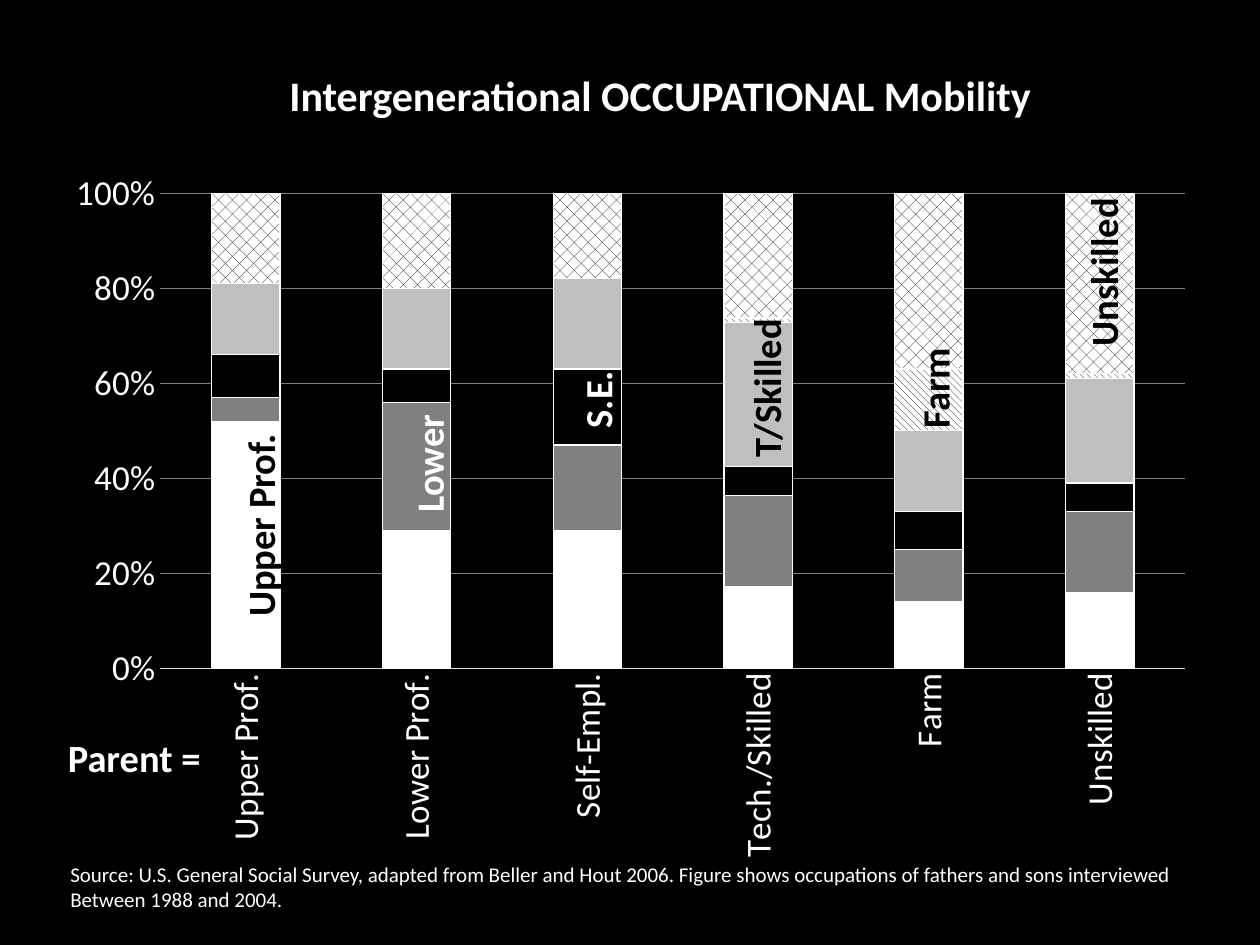
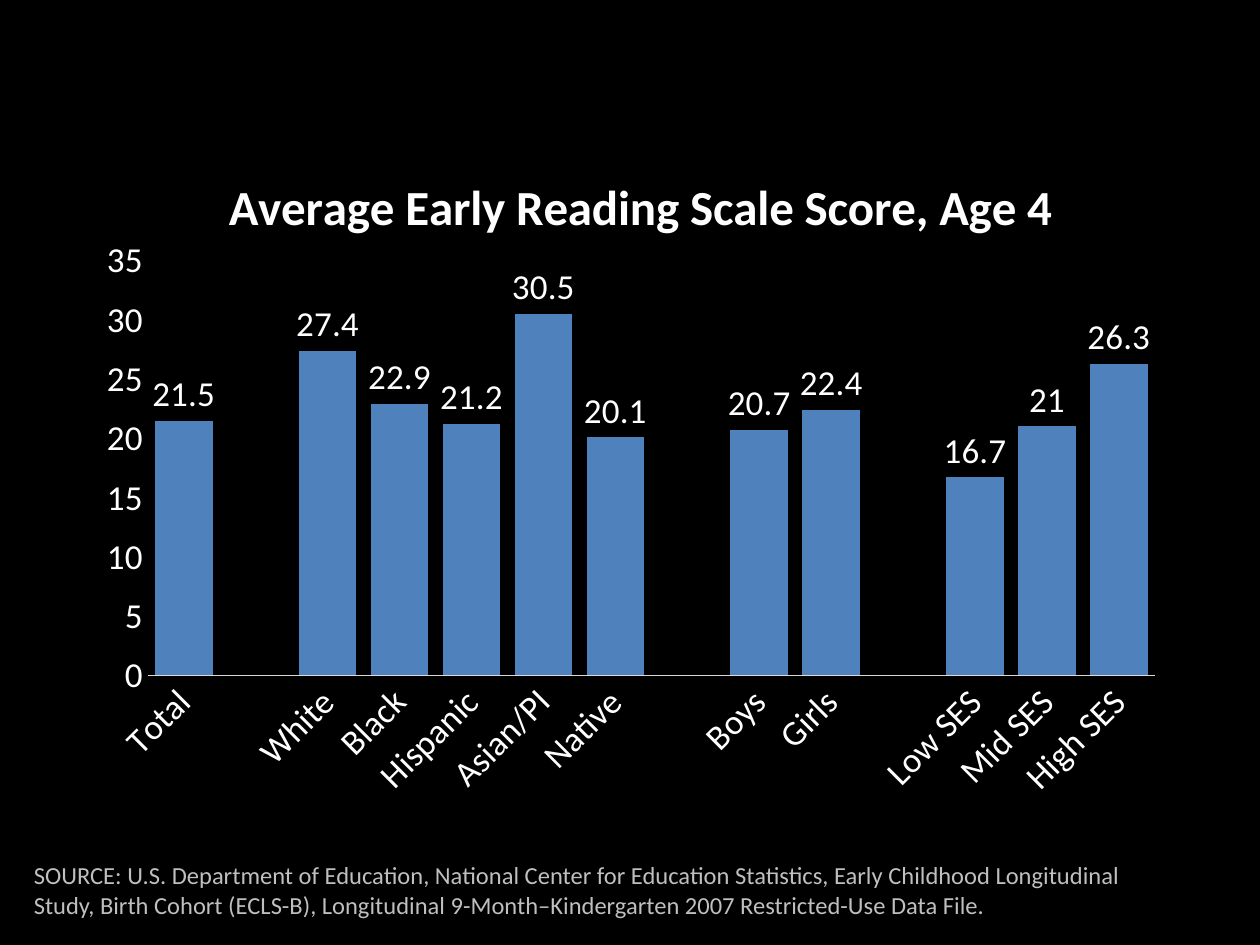
from lxml.etree import SubElement
from pptx import Presentation
from pptx.chart.data import CategoryChartData as ChartData
from pptx.dml.color import RGBColor
from pptx.enum.chart import XL_CHART_TYPE as ChartType
from pptx.enum.chart import XL_LABEL_POSITION as LabelPosition
from pptx.enum.chart import XL_TICK_MARK as TickMark
from pptx.enum.dml import MSO_PATTERN as Pattern
from pptx.enum.text import MSO_ANCHOR as Anchor
from pptx.enum.text import PP_ALIGN as Align
from pptx.oxml.ns import qn
from pptx.util import Inches, Pt

COLORS = {"black": "000000", "white": "FFFFFF", "axis": "D9D9D9",
          "grid": "808080", "silver": "BFBFBF", "blue": "4F81BD"}
FONT = "Calibri"
COLUMNS, ROWS = 100, 75
TITLE_ONLY, BLANK = 5, 6


def color(name):
    return RGBColor.from_string(COLORS[name])


def set_line(line, name):
    line.color.rgb = color(name)
    line.width = Pt(0.75)


def set_font(font, size, name="white", bold=False):
    font.name, font.size, font.bold = FONT, Pt(size), bold
    font.color.rgb = color(name)


def set_fill(fill, style):
    """Fill with a colour name, or with a black pattern on white."""
    if isinstance(style, str):
        fill.solid()
        fill.fore_color.rgb = color(style)
    else:
        fill.patterned()
        fill.pattern = style
        fill.fore_color.rgb = color("black")
        fill.back_color.rgb = color("white")


def set_layout(element, index, **shares):
    """Fix a chart part at shares (x, y, w, h) of the chart's size."""
    for old in element.findall(qn("c:layout")):
        element.remove(old)
    layout = SubElement(element, qn("c:layout"))
    element.insert(index, layout)
    manual = SubElement(layout, qn("c:manualLayout"))
    settings = {"xMode": "edge", "yMode": "edge", **shares}
    if "w" in shares:
        settings = {"layoutTarget": "inner", **settings}
    for tag, value in settings.items():
        SubElement(manual, qn(f"c:{tag}")).set("val", str(value))


class Pages:
    """The shared style and the current page, on a 100 by 75 grid."""

    def __init__(self):
        self.deck = Presentation()
        self.deck.slide_width, self.deck.slide_height = Inches(10), Inches(7.5)
        set_fill(self.deck.slide_master.background.fill, "black")

    def new_page(self, layout):
        self.page = self.deck.slides.add_slide(self.deck.slide_layouts[layout])

    def area(self, left, top, width, height):
        column = self.deck.slide_width / COLUMNS
        row = self.deck.slide_height / ROWS
        return [round(n) for n in (left * column, top * row,
                                   width * column, height * row)]

    def title(self, text, *place):
        box = self.page.shapes.title
        box.left, box.top, box.width, box.height = self.area(*place)
        box.text_frame.text = text
        box.text_frame.word_wrap = False
        box.text_frame.vertical_anchor = Anchor.TOP
        para = box.text_frame.paragraphs[0]
        para.alignment = Align.CENTER
        set_font(para.font, 24, bold=True)

    def text(self, text, *place, size, name="white", bold=False,
             wrap=False, align=Align.LEFT):
        box = self.page.shapes.add_textbox(*self.area(*place))
        box.text_frame.word_wrap = wrap
        box.text_frame.text = text
        for para in box.text_frame.paragraphs:
            para.alignment = align
            set_font(para.font, size, name, bold)
        return box

    def upright_label(self, text, center, middle, length, name):
        height = 4.7
        box = self.text(text, center - length / 2, middle - height / 2,
                        length, height, size=22, name=name, bold=True,
                        align=Align.CENTER)
        box.rotation = 270

    def column_chart(self, kind, place, categories, rows, plot, gap, tilt,
                     step, number_format):
        data = ChartData()
        data.categories = categories
        for number, values in enumerate(rows, 1):
            data.add_series(f"Series {number}", values)
        chart = self.page.shapes.add_chart(kind, *self.area(*place), data).chart
        chart.has_legend = chart.has_title = False
        set_font(chart.font, 20)
        set_layout(chart.plots[0]._element.getparent(), 0, **plot)
        chart.plots[0].gap_width = gap
        chart.plots[0].vary_by_categories = False

        # Axes
        for axis in (chart.category_axis, chart.value_axis):
            axis.major_tick_mark = axis.minor_tick_mark = TickMark.NONE
            axis.has_major_gridlines = False
            set_font(axis.tick_labels.font, 20)
        set_line(chart.category_axis.format.line, "axis")
        turn = chart.category_axis._element.find(qn("c:txPr")).find(qn("a:bodyPr"))
        turn.set("rot", str(-tilt * 60000))
        turn.set("vert", "horz")
        values = chart.value_axis
        values.format.line.fill.background()
        values.major_unit = step
        values.tick_labels.number_format = number_format
        values.tick_labels.number_format_is_linked = False
        return chart


def mobility_page(pages):
    pages.new_page(TITLE_ONLY)
    pages.title("Intergenerational OCCUPATIONAL Mobility", 21.9, 5, 61, 5)

    # Stacked shares, one row per son's occupation
    series = [
        ("white", (52, 29, 29, 17, 14, 16)),
        ("grid", (5, 27, 18, 19, 11, 17)),
        ("black", (9, 7, 16, 6, 8, 6)),
        ("silver", (15, 17, 19, 30, 17, 22)),
        (Pattern.WIDE_DOWNWARD_DIAGONAL, (0, 0, 0, 1, 13, 1)),
        (Pattern.PERCENT_25, (19, 20, 18, 26, 37, 38)),
    ]
    chart = pages.column_chart(
        ChartType.COLUMN_STACKED_100, (4.2, 12.5, 91.7, 56.7),
        ["Upper Prof.", "Lower Prof.", "Self-Empl.", "Tech./Skilled",
         "Farm", "Unskilled"],
        [values for _, values in series],
        plot={"x": 0.093, "y": 0.05, "w": 0.887, "h": 0.665},
        gap=150, tilt=90, step=0.2, number_format="0%")
    chart.plots[0].overlap = 100
    chart.value_axis.has_major_gridlines = True
    set_line(chart.value_axis.major_gridlines.format.line, "grid")
    for stack, (style, _) in zip(chart.plots[0].series, series):
        set_fill(stack.format.fill, style)
        set_line(stack.format.line, "white")

    # Labels on the columns: text, middle row, length, colour
    labels = [
        ("Upper Prof.", 41.7, 16.7, "black"),
        ("Lower", 36.8, 9.9, "white"),
        ("S.E.", 31.7, 6.6, "white"),
        ("T/Skilled", 30.8, 13.1, "black"),
        ("Farm", 30.8, 8.5, "black"),
        ("Unskilled", 21.6, 13.9, "black"),
    ]
    for index, (text, middle, length, name) in enumerate(labels):
        pages.upright_label(text, 20.65 + 13.38 * index, middle, length, name)

    # Axis caption and source
    pages.text("Parent =", 4.4, 57.8, 12.7, 4.7, size=22, bold=True)
    pages.text("Source: U.S. General Social Survey, adapted from Beller and "
               "Hout 2006. Figure shows occupations of fathers and sons "
               "interviewed\nBetween 1988 and 2004.",
               4.6, 67.9, 90.3, 5, size=12)


def reading_page(pages):
    pages.new_page(BLANK)

    # Scores, with gaps between the groups
    scores = [
        ("Total", 21.5), ("", None),
        ("White", 27.4), ("Black", 22.9), ("Hispanic", 21.2),
        ("Asian/PI", 30.5), ("Native", 20.1), ("", None),
        ("Boys", 20.7), ("Girls", 22.4), ("", None),
        ("Low SES", 16.7), ("Mid SES", 21), ("High SES", 26.3),
    ]
    categories, values = zip(*scores)
    chart = pages.column_chart(
        ChartType.COLUMN_CLUSTERED, (6.7, 10.6, 86.7, 53.9),
        categories, [values],
        plot={"x": 0.058, "y": 0.187, "w": 0.922, "h": 0.611},
        gap=25, tilt=45, step=5, number_format="General")
    bars = chart.plots[0].series[0]
    set_fill(bars.format.fill, "blue")
    bars.format.line.fill.background()
    labels = bars.data_labels
    labels.show_value = True
    labels.position = LabelPosition.OUTSIDE_END
    set_font(labels.font, 20)

    # Chart title
    heading = chart.chart_title
    heading.text_frame.text = "Average Early Reading Scale Score, Age 4"
    set_font(heading.text_frame.paragraphs[0].font, 28, bold=True)
    set_layout(heading._element, 1, x=0.124, y=0.046)

    # Source
    pages.text("SOURCE: U.S. Department of Education, National Center for "
               "Education Statistics, Early Childhood Longitudinal Study, "
               "Birth Cohort (ECLS-B), Longitudinal 9-Month–Kindergarten "
               "2007 Restricted-Use Data File.",
               1.7, 67.8, 90, 5.7, size=14, name="silver", wrap=True)


def main():
    pages = Pages()
    mobility_page(pages)
    reading_page(pages)
    pages.deck.save("out.pptx")


if __name__ == "__main__":
    main()
